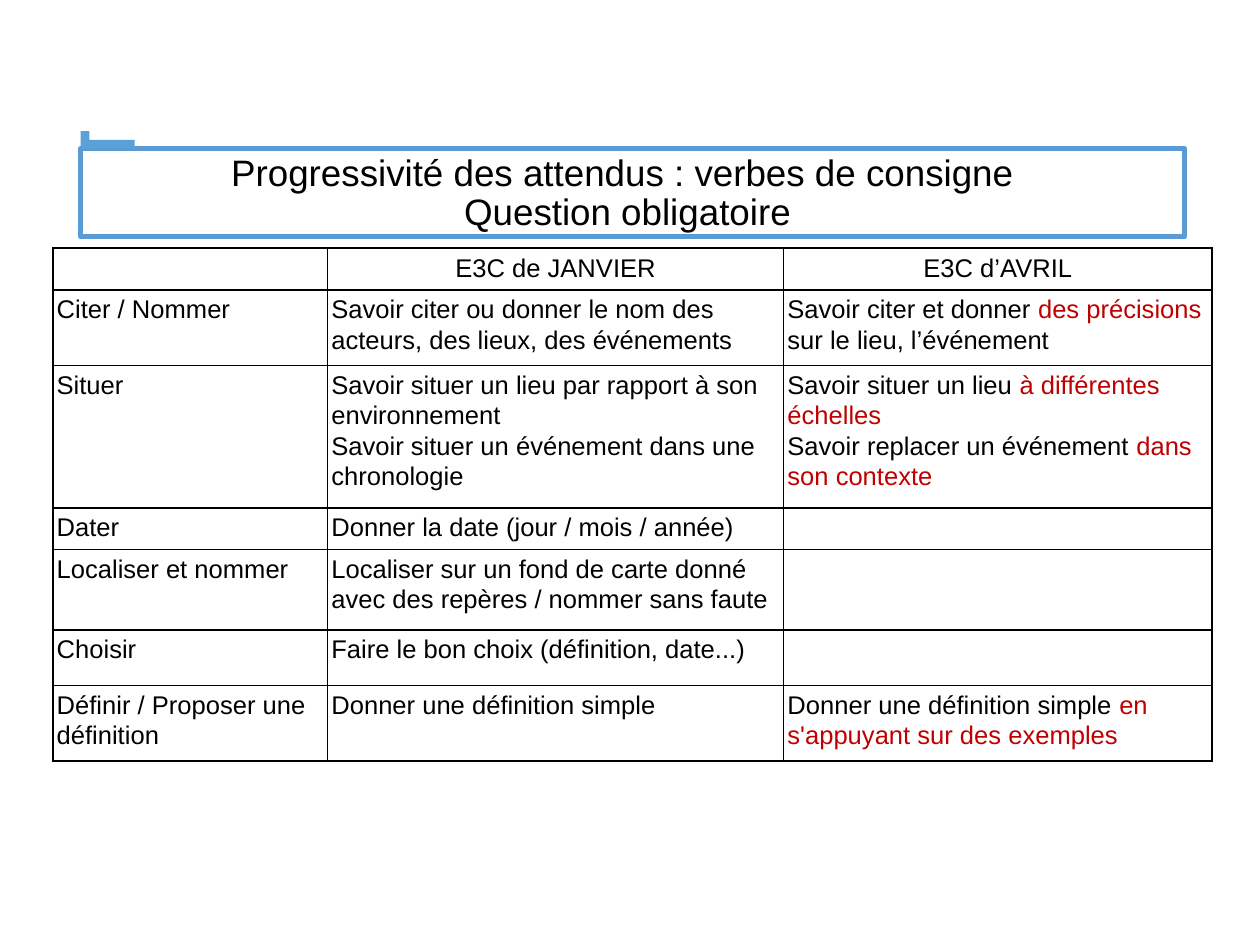
from lxml.etree import SubElement
from pptx import Presentation
from pptx.dml.color import RGBColor
from pptx.enum.shapes import MSO_SHAPE
from pptx.enum.text import MSO_ANCHOR, MSO_AUTO_SIZE, PP_ALIGN
from pptx.oxml.ns import qn
from pptx.util import Inches, Pt

BLACK = RGBColor(0x00, 0x00, 0x00)
RED = RGBColor(0xC0, 0x00, 0x00)
FRAME_BLUE = RGBColor(0x5B, 0x9B, 0xD5)
CORNER_BLUE = RGBColor(0x5A, 0xA1, 0xD8)

TITLE_LINES = ["Progressivité des attendus : verbes de consigne ", "Question obligatoire"]
COLUMN_WIDTHS = [2.18, 3.62, 3.4]
ROW_HEIGHTS = [0.33, 0.6, 1.13, 0.33, 0.64, 0.44, 0.6]
# A newline starts a paragraph; words between asterisks are red.
ROWS = [
    ["", "E3C de JANVIER", "E3C d’AVRIL"],
    ["Citer / Nommer",
     "Savoir citer ou donner le nom des acteurs, des lieux, des événements",
     "Savoir citer et donner *des précisions *sur le lieu, l’événement"],
    ["Situer",
     "Savoir situer un lieu par rapport à son environnement\n"
     "Savoir situer un événement dans une chronologie",
     "Savoir situer un lieu *à différentes échelles*\n"
     "Savoir replacer un événement *dans son contexte*"],
    ["Dater", "Donner la date (jour / mois / année)", ""],
    ["Localiser et nommer",
     "Localiser sur un fond de carte donné avec des repères / nommer sans faute", ""],
    ["Choisir", "Faire le bon choix (définition, date...)", ""],
    ["Définir / Proposer une définition",
     "Donner une définition simple",
     "Donner une définition simple *en s'appuyant sur des exemples*"],
]


class SlideBuilder:
    font_name = "Arial"
    title_size = Pt(21)
    cell_size = Pt(14.6)
    cell_margin = Inches(0.03)
    border_width = Pt(1)

    def __init__(self, slide):
        self.slide = slide

    def format_font(self, font, size, color=BLACK):
        font.name, font.size, font.bold = self.font_name, size, False
        font.color.rgb = color

    def add_title(self, lines, left, top, width, height):
        title = self.slide.shapes.title
        title.left, title.top = Inches(left), Inches(top)
        title.width, title.height = Inches(width), Inches(height)
        title.fill.background()
        title.line.color.rgb = FRAME_BLUE
        title.line.width = Pt(3)
        frame = title.text_frame
        frame.text = "\n".join(lines)
        frame.word_wrap = True
        frame.auto_size = MSO_AUTO_SIZE.NONE
        frame.vertical_anchor = MSO_ANCHOR.MIDDLE
        frame.margin_left, frame.margin_right = Inches(0.02), Inches(0.1)
        frame.margin_top, frame.margin_bottom = Inches(0.05), Inches(0.03)
        for paragraph in frame.paragraphs:
            paragraph.alignment = PP_ALIGN.CENTER
            paragraph.line_spacing = 0.9
            paragraph.space_before = Pt(0)
            for run in paragraph.runs:
                self.format_font(run.font, self.title_size)

    def add_bar(self, left, top, width, height):
        bar = self.slide.shapes.add_shape(
            MSO_SHAPE.RECTANGLE, Inches(left), Inches(top), Inches(width), Inches(height))
        bar.shadow.inherit = False
        bar.fill.solid()
        bar.fill.fore_color.rgb = CORNER_BLUE
        bar.line.fill.background()

    def add_table(self, rows, left, top, column_widths, row_heights):
        table = self.slide.shapes.add_table(
            len(rows), len(column_widths), Inches(left), Inches(top),
            Inches(sum(column_widths)), Inches(sum(row_heights))).table
        table.first_row = table.horz_banding = False
        for column, width in zip(table.columns, column_widths):
            column.width = Inches(width)
        for row, height in zip(table.rows, row_heights):
            row.height = Inches(height)
        for row_index, texts in enumerate(rows):
            alignment = PP_ALIGN.LEFT if row_index else PP_ALIGN.CENTER
            for column_index, text in enumerate(texts):
                self.fill_cell(table.cell(row_index, column_index), text, alignment)

    def fill_cell(self, cell, text, alignment):
        cell.margin_left = cell.margin_right = self.cell_margin
        cell.margin_top = cell.margin_bottom = self.cell_margin
        self.add_borders(cell)
        cell.fill.background()
        frame = cell.text_frame
        for index, line in enumerate(text.split("\n")):
            paragraph = frame.add_paragraph() if index else frame.paragraphs[0]
            paragraph.alignment = alignment
            paragraph.line_spacing = 1.07
            if not line:
                SubElement(paragraph._p, qn("a:endParaRPr"),
                           sz=str(int(self.cell_size.pt * 100)))
            for position, part in enumerate(line.split("*")):
                if part:
                    run = paragraph.add_run()
                    run.text = part
                    self.format_font(run.font, self.cell_size, RED if position % 2 else BLACK)

    def add_borders(self, cell):
        properties = cell._tc.get_or_add_tcPr()
        for side in ("a:lnL", "a:lnR", "a:lnT", "a:lnB"):
            line = SubElement(properties, qn(side), w=str(self.border_width))
            fill = SubElement(line, qn("a:solidFill"))
            SubElement(fill, qn("a:srgbClr"), val=str(BLACK))


def main():
    presentation = Presentation()
    presentation.slide_width, presentation.slide_height = Inches(10), Inches(7.5)
    title_only = presentation.slide_layouts[5]
    builder = SlideBuilder(presentation.slides.add_slide(title_only))
    builder.add_title(TITLE_LINES, 0.64, 1.18, 8.76, 0.7)
    builder.add_bar(0.64, 1.04, 0.07, 0.14)
    builder.add_bar(0.67, 1.11, 0.4, 0.07)
    builder.add_table(ROWS, 0.42, 1.97, COLUMN_WIDTHS, ROW_HEIGHTS)
    presentation.save("out.pptx")


if __name__ == "__main__":
    main()
